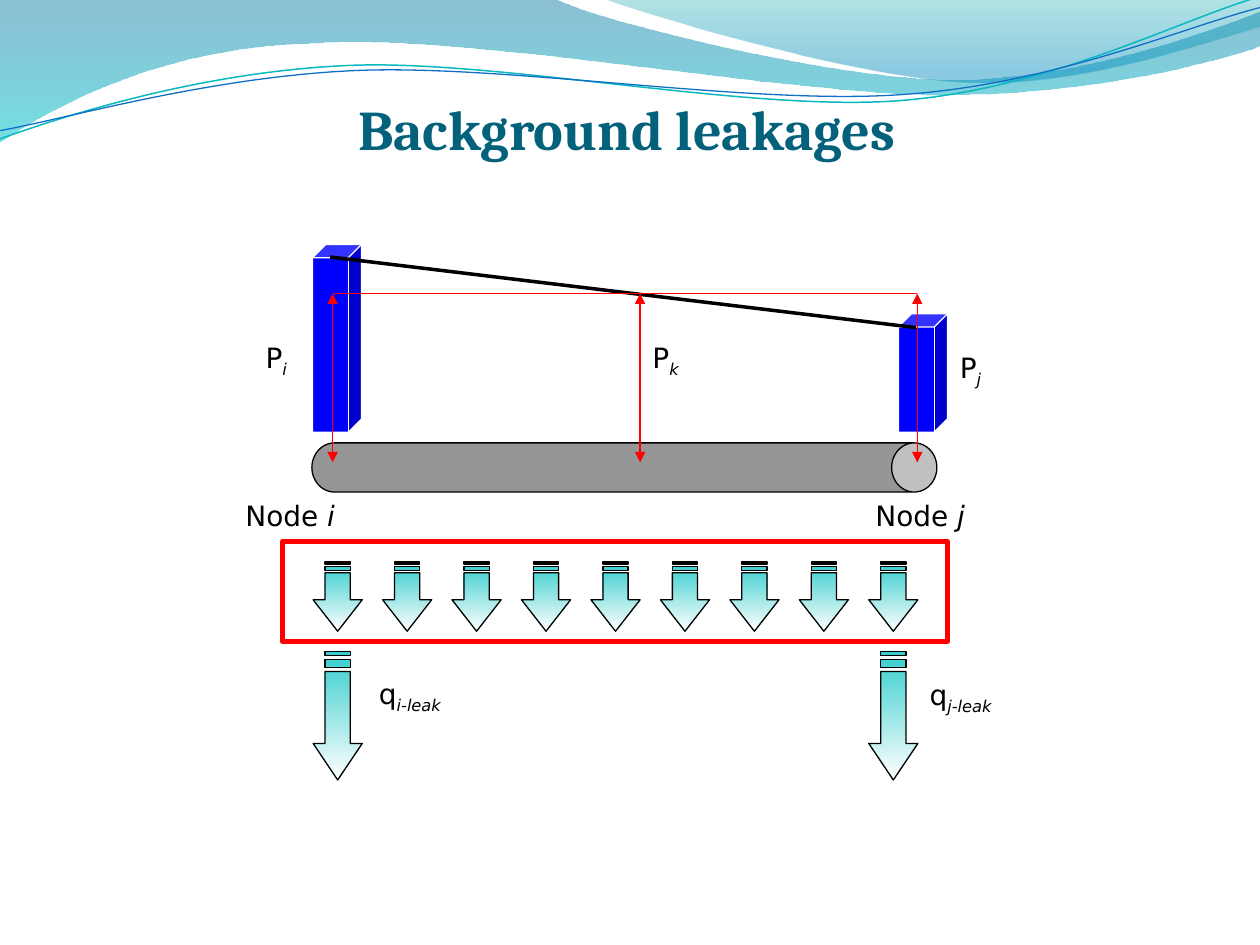
from itertools import chain

from lxml import etree
from pptx import Presentation
from pptx.dml.color import RGBColor
from pptx.enum.shapes import MSO_CONNECTOR, MSO_SHAPE
from pptx.enum.text import MSO_ANCHOR, MSO_AUTO_SIZE, PP_ALIGN
from pptx.oxml.ns import qn
from pptx.util import Inches, Pt

STRAIGHT = MSO_CONNECTOR.STRAIGHT
CAN, CUBE, RECTANGLE = MSO_SHAPE.CAN, MSO_SHAPE.CUBE, MSO_SHAPE.RECTANGLE
BOTTOM, CENTER, NO_AUTOFIT = MSO_ANCHOR.BOTTOM, PP_ALIGN.CENTER, MSO_AUTO_SIZE.NONE

THEME = {
    "title_font": "Cambria", "title_size": 32, "title": "04617B",
    "label_font": "DejaVu Sans", "label_size": 16, "ink": "000000",
    "pipe": "969696", "column": "0000FF", "edge": "FFFFFF", "pressure": "FF0000",
    "thin": 0.75, "grade": 2, "frame": 3,
}
# Gradient stops: position, colour, opacity in percent
LEAK_GRADIENT = [(0, "33CCCC", 100), (1, "FFFFFF", 100)]

TITLE = "Background leakages"
# Waves: start, segments (one point is a line, three are a curve), gradient, outline
WAVES = [
    ((0, 0), [
        [(4.4, -0.01)],
        [(4.76, 0.17), (6.64, 0.63), (7.58, 0.63)],
        [(8.53, 0.63), (9.58, 0.26), (10, 0.09)],
        [(10.01, 0.36)],
        [(9.83, 0.44), (8.7, 0.76), (7.46, 0.75)],
        [(6.22, 0.75), (3.82, 0.28), (2.57, 0.34)],
        [(1.29, 0.36), (0.46, 0.83), (-0.01, 1.13)],
        [(0, 0)],
    ], [(0, "0074A1", 45), (1, "00C6CF", 55)], None),
    ((4.79, -0.01), [
        [(5.09, 0.11), (6.82, 0.62), (7.69, 0.65)],
        [(8.56, 0.69), (9.61, 0.32), (10, 0.21)],
        [(10, 0)],
        [(4.79, -0.01)],
    ], [(0, "00A1A9", 30), (0.8, "008BBF", 45)], None),
    ((-0.02, 1.11), [
        [(0.48, 0.93), (1.58, 0.57), (2.77, 0.52)],
        [(3.95, 0.47), (5.93, 0.89), (7.13, 0.8)],
        [(8.33, 0.71), (9.38, 0.15), (9.98, -0.02)],
    ], None, ("0AB8BF", 0.85)),
    ((-0.02, 1.04), [
        [(0.47, 0.96), (1.64, 0.61), (2.83, 0.56)],
        [(4.03, 0.51), (5.97, 0.84), (7.17, 0.75)],
        [(8.36, 0.67), (9.41, 0.21), (10, 0.06)],
    ], None, ("0F6FC6", 0.75)),
]
# Labels: left, top, width, upright text, italic text, italic part is subscript
LABELS = [
    (1.85, 3.91, 1.14, "Node ", "i", False),
    (6.85, 3.91, 1.14, "Node ", "j", False),
    (2.01, 2.65, 0.47, "P", "i", True),
    (7.52, 2.73, 0.47, "P", "j", True),
    (5.08, 2.65, 0.47, "P", "k", True),
    (2.91, 5.32, 1.14, "q", "i-leak", True),
    (7.28, 5.33, 1.14, "q", "j-leak", True),
]
COLUMNS = [(2.48, 1.94), (7.13, 2.49)]  # left, top
COLUMN_WIDTH, COLUMN_BOTTOM = 0.39, 3.43
PRESSURE_XS, PRESSURE_TOP, PRESSURE_BOTTOM = (2.64, 5.08, 7.28), 2.33, 3.67
GRADE_LINE = ((2.62, 2.04), (7.27, 2.6))
LEAK_COUNT, LEAK_FIRST_X, LEAK_LAST_X = 9, 2.68, 7.09
LEAK_WIDTH, SHAFT_WIDTH = 0.39, 0.2
SMALL_LEAK = (4.46, 0.55, 0.25)  # top, height, head height
LARGE_LEAK = (5.17, 1.02, 0.29)


def rgb(value):
    return RGBColor.from_string(value)


def emu(points):
    return [(Inches(x), Inches(y)) for x, y in points]


def style(shape, fill=None, line=None):
    shape.shadow.inherit = False
    if fill:
        shape.fill.solid()
        shape.fill.fore_color.rgb = rgb(fill)
    else:
        shape.fill.background()
    if line:
        shape.line.color.rgb = rgb(line[0])
        shape.line.width = Pt(line[1])
    else:
        shape.line.fill.background()


def fill_downward(shape, stops):
    """Fill with a gradient that runs from top to bottom."""
    shape.fill.gradient()
    shape.fill.gradient_angle = 270
    for stop, (position, color, _) in zip(shape.fill.gradient_stops, stops):
        stop.position = position
        stop.color.rgb = rgb(color)
    colors = shape._element.spPr.find(qn("a:gradFill")).iter(qn("a:srgbClr"))
    for element, (_, _, opacity) in zip(colors, stops):
        if opacity < 100:
            etree.SubElement(element, qn("a:alpha"), val=str(opacity * 1000))


def add_wave(slide, start, segments, gradient, line):
    builder = slide.shapes.build_freeform(*emu([start])[0])
    builder.add_line_segments(emu(chain.from_iterable(segments)), close=bool(gradient))
    shape = builder.convert_to_shape()
    steps = iter(list(shape._element.iter(qn("a:lnTo"))))
    for segment in segments:
        first, *others = [next(steps) for _ in segment]
        if others:
            curve = etree.Element(qn("a:cubicBezTo"))
            first.addprevious(curve)
            for step in (first, *others):
                curve.append(step[0])
                step.getparent().remove(step)
    style(shape, line=line)
    if gradient:
        fill_downward(shape, gradient)


def add_leak(slide, x, top, height, head):
    """Add a striped down arrow centred on x; stripes scale with its height."""
    half, shaft = LEAK_WIDTH / 2, SHAFT_WIDTH / 2
    tip, neck = top + height, top + height - head
    body = top + height * 5 / 32
    contours = [[(x + half, neck), (x + shaft, neck), (x + shaft, body), (x - shaft, body),
                 (x - shaft, neck), (x - half, neck), (x, tip)]]
    for start, end in ((2 / 32, 4 / 32), (0, 1 / 32)):
        upper, lower = top + height * start, top + height * end
        contours.append([(x + shaft, upper), (x - shaft, upper),
                         (x - shaft, lower), (x + shaft, lower)])
    builder = slide.shapes.build_freeform(*emu(contours[0])[0])
    for index, contour in enumerate(contours):
        points = emu(contour)
        if index:
            builder.move_to(*points[0])
        builder.add_line_segments(points[1:], close=True)
    shape = builder.convert_to_shape()
    style(shape, line=(THEME["ink"], THEME["thin"]))
    fill_downward(shape, LEAK_GRADIENT)


def add_box(slide, kind, left, top, width, height, fill, line):
    shape = slide.shapes.add_shape(
        kind, Inches(left), Inches(top), Inches(width), Inches(height))
    style(shape, fill, line)
    return shape


def add_line(slide, start, end, color, width, arrows=False):
    line = slide.shapes.add_connector(STRAIGHT, *emu([start])[0], *emu([end])[0])
    line.line.color.rgb = rgb(color)
    line.line.width = Pt(width)
    if arrows:
        for end_name in ("a:headEnd", "a:tailEnd"):
            etree.SubElement(line.line._get_or_add_ln(), qn(end_name), type="triangle")
    etree.SubElement(line._element.spPr, qn("a:effectLst"))


def add_label(slide, left, top, width, upright, italic, subscript):
    box = slide.shapes.add_textbox(Inches(left), Inches(top), Inches(width), Inches(0.39))
    box.text_frame.word_wrap = True
    paragraph = box.text_frame.paragraphs[0]
    properties = paragraph._p.get_or_add_pPr()
    properties.set("marL", str(Inches(0.38)))
    properties.set("indent", str(-Inches(0.38)))
    spacing = etree.SubElement(properties, qn("a:spcBef"))
    etree.SubElement(spacing, qn("a:spcPct"), val="20000")
    for text, is_italic in ((upright, False), (italic, True)):
        run = paragraph.add_run()
        run.text = text
        run.font.name = THEME["label_font"]
        run.font.size = Pt(THEME["label_size"])
        run.font.color.rgb = rgb(THEME["ink"])
        run.font.italic = is_italic
        if is_italic and subscript:
            run.font._element.set("baseline", "-25000")


def format_title(title):
    title.left, title.top, title.width, title.height = map(Inches, (1.54, 0.33, 6.87, 0.95))
    frame = title.text_frame
    frame.text = TITLE
    frame.auto_size, frame.vertical_anchor = NO_AUTOFIT, BOTTOM
    frame.margin_left = frame.margin_right = frame.margin_bottom = 0
    frame.margin_top = Inches(0.05)
    frame.paragraphs[0].alignment = CENTER
    font = frame.paragraphs[0].runs[0].font
    font.name, font.size, font.bold = THEME["title_font"], Pt(THEME["title_size"]), True
    font.color.rgb = rgb(THEME["title"])


def main():
    presentation = Presentation()
    presentation.slide_width, presentation.slide_height = Inches(10), Inches(7.5)
    slide = presentation.slides.add_slide(presentation.slide_layouts[5])
    for wave in WAVES:
        add_wave(slide, *wave)
    title = slide.shapes.title
    format_title(title)
    slide.shapes._spTree.append(title._element)  # in front of the waves

    thin, red = THEME["thin"], THEME["pressure"]
    pipe = add_box(slide, CAN, 4.76, 1.23, 0.39, 4.96, THEME["pipe"], (THEME["ink"], thin))
    pipe.rotation = 90
    pipe.adjustments[0] = 0.92
    for left, top in COLUMNS:
        column = add_box(slide, CUBE, left, top, COLUMN_WIDTH, COLUMN_BOTTOM - top,
                         THEME["column"], (THEME["edge"], thin))
        column.adjustments[0] = 0.27

    add_line(slide, *GRADE_LINE, THEME["ink"], THEME["grade"])
    for x in PRESSURE_XS:
        add_line(slide, (x, PRESSURE_BOTTOM), (x, PRESSURE_TOP), red, thin, arrows=True)
    add_line(slide, (PRESSURE_XS[0], PRESSURE_TOP), (PRESSURE_XS[-1], PRESSURE_TOP), red, thin)

    pitch = (LEAK_LAST_X - LEAK_FIRST_X) / (LEAK_COUNT - 1)
    for index in range(LEAK_COUNT):
        add_leak(slide, LEAK_FIRST_X + index * pitch, *SMALL_LEAK)
    for x in (LEAK_FIRST_X, LEAK_LAST_X):
        add_leak(slide, x, *LARGE_LEAK)
    add_box(slide, RECTANGLE, 2.24, 4.3, 5.28, 0.79, None, (red, THEME["frame"]))
    for label in LABELS:
        add_label(slide, *label)
    presentation.save("out.pptx")


if __name__ == "__main__":
    main()
